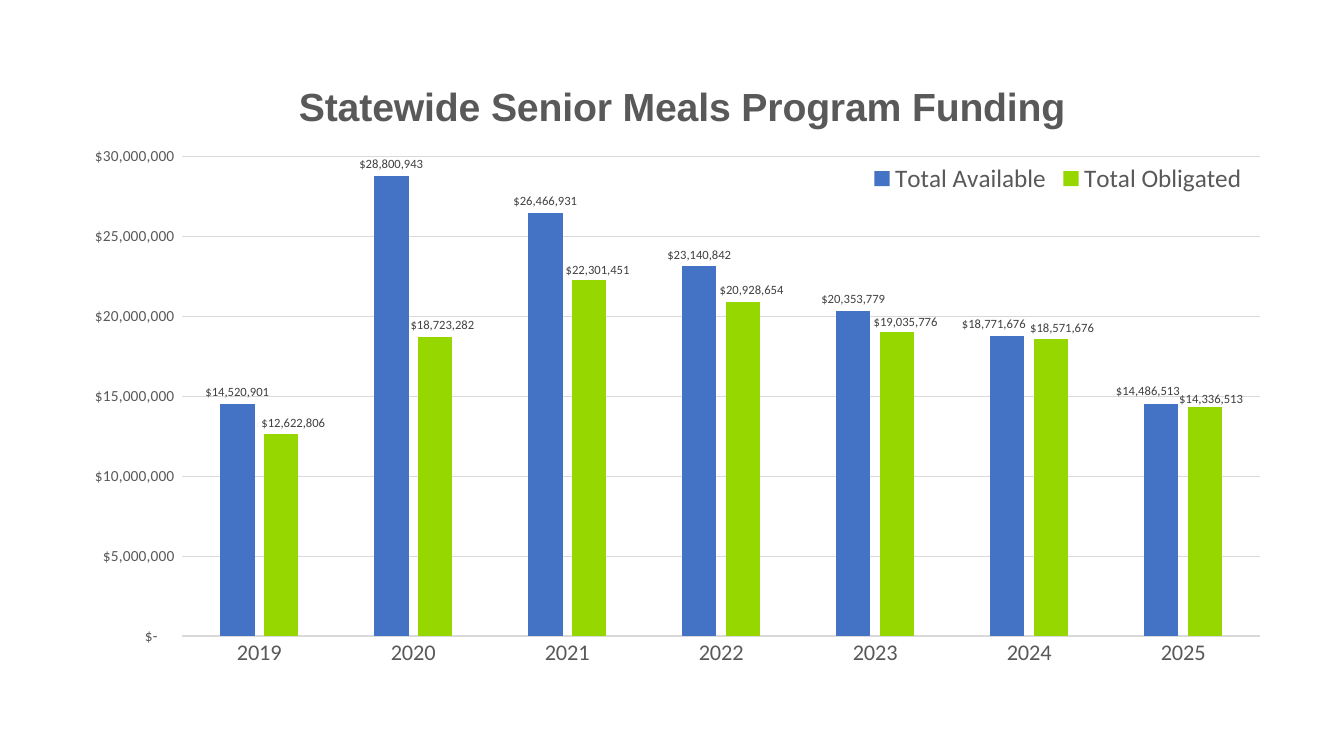
from lxml import etree
from pptx import Presentation
from pptx.chart.data import CategoryChartData
from pptx.dml.color import RGBColor
from pptx.enum.chart import XL_CHART_TYPE, XL_LABEL_POSITION, XL_LEGEND_POSITION, XL_TICK_MARK
from pptx.oxml.ns import qn
from pptx.util import Pt

COLUMNS = XL_CHART_TYPE.COLUMN_CLUSTERED
OUTSIDE_END = XL_LABEL_POSITION.OUTSIDE_END
LEGEND_BOTTOM = XL_LEGEND_POSITION.BOTTOM
NO_TICK = XL_TICK_MARK.NONE

COLORS = {"available": "4472C4", "obligated": "97D700", "text": "595959",
          "label": "404040", "grid": "D9D9D9", "base": "000000"}
DOLLARS = '_("$"* #,##0_);_("$"* \\(#,##0\\);_("$"* "-"??_);_(@_)'
YEARS = ["2019", "2020", "2021", "2022", "2023", "2024", "2025"]

# Name, colour, yearly amounts, and label shifts as fractions of the chart size
FUNDING = [
    ("Total Available", "available",
     [14520901, 28800943, 26466931, 23140842, 20353779, 18771676, 14486513],
     {5: (-0.011, 0), 6: (-0.011, -0.003)}),
    ("Total Obligated", "obligated",
     [12622806, 18723282, 22301451, 20928654, 19035776, 18571676, 14336513],
     {0: (0.01, 0), 1: (0.006, 0), 2: (0.007, 0.003), 3: (0.007, 0),
      4: (0.007, 0.003), 5: (0.009, 0), 6: (0.005, 0.006)}),
]


def rgb(name):
    return RGBColor.from_string(COLORS[name])


def style_font(font, size, color, face="Calibri", bold=False):
    font.size = Pt(size)
    font.name = face
    font.bold = bold
    font.color.rgb = rgb(color)


def style_line(line, color):
    line.color.rgb = rgb(color)
    line.width = Pt(0.75)


def set_layout(parent, position, **settings):
    """Give a chart part a manual layout as its child at the given position."""
    for old in parent.findall(qn("c:layout")):
        parent.remove(old)
    layout = etree.Element(qn("c:layout"))
    manual = etree.SubElement(layout, qn("c:manualLayout"))
    for tag, value in settings.items():
        etree.SubElement(manual, qn("c:" + tag)).set("val", str(value))
    parent.insert(position, layout)


def add_title(chart, text):
    frame = chart.chart_title.text_frame
    span = frame.paragraphs[0].add_run()
    span.text = text
    style_font(span.font, 28, "text", "Arial", True)
    set_layout(chart.chart_title._element, 1, xMode="edge", yMode="edge", x=0.185, y=0.04)


def style_axes(chart):
    years, amounts = chart.category_axis, chart.value_axis
    for axis, size in ((years, 16), (amounts, 11)):
        axis.major_tick_mark = axis.minor_tick_mark = NO_TICK
        style_font(axis.tick_labels.font, size, "text")
    style_line(years.format.line, "grid")
    amounts.format.line.fill.background()
    amounts.minimum_scale, amounts.maximum_scale = 0, 30000000
    amounts.major_unit = 5000000
    amounts.tick_labels.number_format = DOLLARS
    amounts.tick_labels.number_format_is_linked = False
    style_line(amounts.major_gridlines.format.line, "grid")


def style_series(series, color, shifts):
    series.format.fill.solid()
    series.format.fill.fore_color.rgb = rgb(color)
    labels = series.data_labels
    labels.show_value = True
    labels.number_format = DOLLARS
    labels.number_format_is_linked = False
    labels.position = OUTSIDE_END
    style_font(labels.font, 9, "label")
    for index, (across, down) in shifts.items():
        label = series.points[index].data_label
        style_font(label.font, 9, "label")
        label.position = OUTSIDE_END
        element = series._element.xpath(f".//c:dLbl[c:idx/@val='{index}']")[0]
        set_layout(element, 1, x=across, y=down)


def add_legend(chart):
    chart.has_legend = True
    legend = chart.legend
    legend.position = LEGEND_BOTTOM
    legend.include_in_layout = False
    style_font(legend.font, 18, "text")
    set_layout(legend._element, 1, xMode="edge", yMode="edge",
               x=0.656, y=0.164, w=0.316, h=0.055)


def add_funding_chart(page, left, top, width, height):
    data = CategoryChartData(number_format=DOLLARS)
    data.categories = YEARS
    for name, _, amounts, _ in FUNDING:
        data.add_series(name, amounts)
    chart = page.shapes.add_chart(COLUMNS, Pt(left), Pt(top), Pt(width), Pt(height), data).chart
    style_font(chart.font, 10, "base")
    add_title(chart, "Statewide Senior Meals Program Funding")
    plot = chart.plots[0]
    plot.gap_width, plot.overlap, plot.vary_by_categories = 219, -27, False
    for series, (_, color, _, shifts) in zip(plot.series, FUNDING):
        style_series(series, color, shifts)
    style_axes(chart)
    add_legend(chart)
    set_layout(chart._chartSpace.chart.plotArea, 0, layoutTarget="inner", xMode="edge",
               yMode="edge", x=0.095, y=0.159, w=0.885, h=0.704)


def main():
    deck = Presentation()
    deck.slide_width, deck.slide_height = Pt(960), Pt(540)
    page = deck.slides.add_slide(deck.slide_layouts[6])
    add_funding_chart(page, 47.5, 34.5, 870, 486.5)
    deck.save("out.pptx")


if __name__ == "__main__":
    main()
